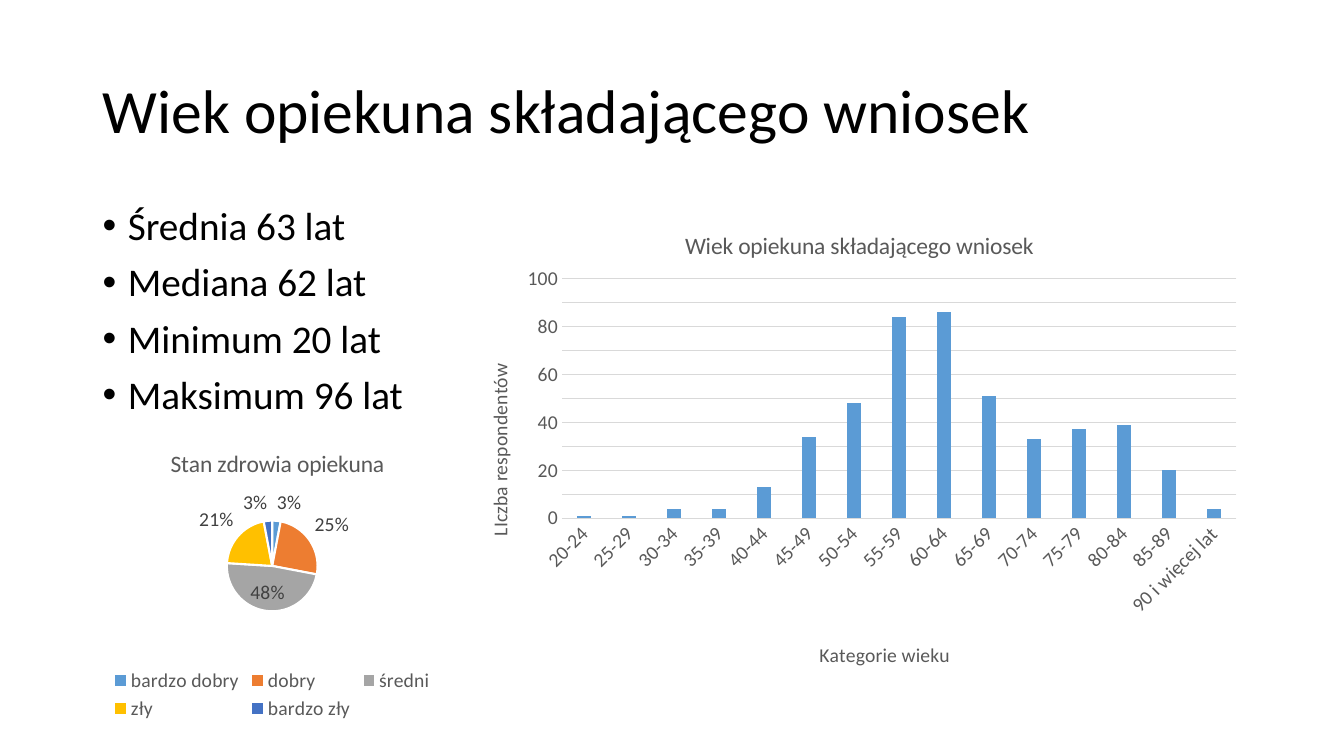
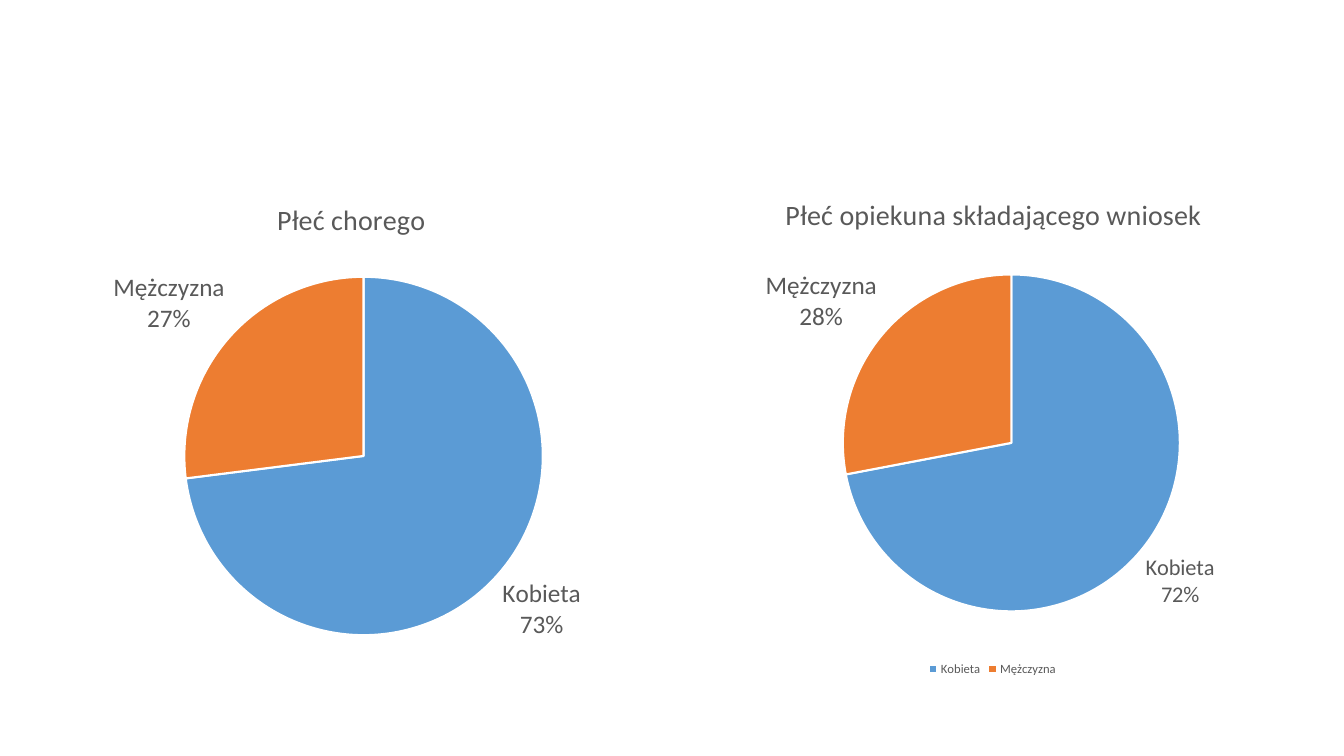
from copy import deepcopy

from lxml import etree
from pptx import Presentation
from pptx.chart.data import CategoryChartData
from pptx.dml.color import RGBColor
from pptx.enum.chart import XL_CHART_TYPE, XL_LABEL_POSITION, XL_LEGEND_POSITION, XL_TICK_MARK
from pptx.enum.text import MSO_ANCHOR
from pptx.oxml.ns import qn
from pptx.util import Inches, Pt

COLUMN = XL_CHART_TYPE.COLUMN_CLUSTERED
PIE = XL_CHART_TYPE.PIE
BEST = XL_LABEL_POSITION.BEST_FIT
OUT = XL_LABEL_POSITION.OUTSIDE_END
BOTTOM = XL_LEGEND_POSITION.BOTTOM
NO_TICK = XL_TICK_MARK.NONE
MIDDLE = MSO_ANCHOR.MIDDLE

FONT = "Calibri"
BLACK = RGBColor(0x00, 0x00, 0x00)
WHITE = RGBColor(0xFF, 0xFF, 0xFF)
GRAY = RGBColor(0x59, 0x59, 0x59)
DARK = RGBColor(0x40, 0x40, 0x40)
RULE = RGBColor(0xD9, 0xD9, 0xD9)
BLUE = RGBColor(0x5B, 0x9B, 0xD5)
SLICES = [
    BLUE,
    RGBColor(0xED, 0x7D, 0x31),
    RGBColor(0xA5, 0xA5, 0xA5),
    RGBColor(0xFF, 0xC0, 0x00),
    RGBColor(0x44, 0x72, 0xC4),
]

AGES = [f"{low}-{low + 4}" for low in range(20, 90, 5)] + ["90 i więcej lat"]
COUNTS = [1, 1, 4, 4, 13, 34, 48, 84, 86, 51, 33, 37, 39, 20, 4]
HEALTH = ["bardzo dobry", "dobry", "średni", "zły", "bardzo zły"]
SEXES = ["Kobieta", "Mężczyzna"]


def style(font, size, color=GRAY):
    font.name = FONT
    font.size = Pt(size)
    font.bold = False
    font.color.rgb = color


def add_text(slide, box, lines, size, bullet=False):
    frame = slide.shapes.add_textbox(*map(Inches, box)).text_frame
    frame.word_wrap = True
    frame.text = "\n".join(lines)
    for para in frame.paragraphs:
        para.line_spacing = 0.9
        style(para.runs[0].font, size, BLACK)
        if bullet:
            para.space_before = Pt(10)
            props = para._p.get_or_add_pPr()
            props.set("marL", str(Inches(0.25)))
            props.set("indent", str(Inches(-0.25)))
            etree.SubElement(props, qn("a:buFont")).set("typeface", "Arial")
            etree.SubElement(props, qn("a:buChar")).set("char", "•")
    return frame


def place(part, spots):
    layout = part.find(qn("c:layout"))
    if layout is None:
        layout = etree.Element(qn("c:layout"))
        part.insert(0, layout)
    manual = etree.SubElement(layout, qn("c:manualLayout"))
    rules = [("xMode", "edge"), ("yMode", "edge"), *zip("xywh", spots)]
    if len(spots) == 4:
        rules.insert(0, ("layoutTarget", "inner"))
    for tag, value in rules:
        etree.SubElement(manual, qn(f"c:{tag}")).set("val", str(value))


def set_title(title, text, size, spot):
    title.text_frame.text = text
    style(title.text_frame.paragraphs[0].runs[0].font, size)
    place(title._element, spot)


def add_chart(slide, kind, box, cats, vals, title, size, spot, plot):
    data = CategoryChartData()
    data.categories = cats
    data.add_series("Series 1", vals)
    chart = slide.shapes.add_chart(kind, *map(Inches, box), data).chart
    style(chart.font, 14, BLACK)
    chart.has_legend = False
    chart.has_title = True
    set_title(chart.chart_title, title, size, spot)
    place(chart._chartSpace.chart.plotArea, plot)
    return chart


def turn(part, angle):
    body = next(part.iter(qn("a:bodyPr")))
    body.set("rot", str(angle * 60000))
    body.set("vert", "horz")


def rule(line):
    line.color.rgb = RULE
    line.width = Pt(0.75)


def add_grid(axis):
    axis.has_major_gridlines = axis.has_minor_gridlines = True
    rule(axis.major_gridlines.format.line)
    major = axis._element.find(qn("c:majorGridlines"))
    minor = axis._element.find(qn("c:minorGridlines"))
    minor.append(deepcopy(major.find(qn("c:spPr"))))


def add_bars(slide, box, cats, vals, title, size, spot, plot):
    chart = add_chart(slide, COLUMN, box, cats, vals, title, size, spot, plot)
    bars = chart.plots[0]
    bars.gap_width = 219
    bars.overlap = -27
    bars.vary_by_categories = False
    fill = bars.series[0].format.fill
    fill.solid()
    fill.fore_color.rgb = BLUE
    cat, val = chart.category_axis, chart.value_axis
    for axis in (cat, val):
        axis.major_tick_mark = axis.minor_tick_mark = NO_TICK
        style(axis.tick_labels.font, 14)
    rule(cat.format.line)
    turn(cat._element.find(qn("c:txPr")), -45)
    val.format.line.fill.background()
    val.minimum_scale, val.maximum_scale = 0, 100
    val.major_unit, val.minor_unit = 20, 10
    add_grid(val)
    set_title(cat.axis_title, "Kategorie wieku", 14, (0.45, 0.91))
    set_title(val.axis_title, "LIczba respondentów", 14, (0.03, 0.33))
    turn(val.axis_title._element, -90)


def add_pie(slide, box, cats, vals, title, size, spot, plot,
            label, color=GRAY, pos=OUT, named=True, legend=None, last=None):
    chart = add_chart(slide, PIE, box, cats, vals, title, size, spot, plot)
    if legend:
        chart.has_legend = True
        chart.legend.position = BOTTOM
        chart.legend.include_in_layout = False
        style(chart.legend.font, legend)
    series = chart.plots[0].series[0]
    for i in range(len(vals)):
        form = series.points[i].format
        form.fill.solid()
        form.fill.fore_color.rgb = SLICES[i]
        form.line.color.rgb = WHITE
        form.line.width = Pt(1.5)
    labels = series.data_labels
    style(labels.font, label, color)
    labels.number_format = "0%"
    labels.number_format_is_linked = False
    labels.position = pos
    if last:
        note = series.points[len(vals) - 1].data_label
        style(note.font, last, color)
        note.position = pos
    flags = {"showVal": 0, "showCatName": int(named), "showPercent": 1}
    for part in series._element.iter(qn("c:dLbls"), qn("c:dLbl")):
        for tag, flag in flags.items():
            part.find(qn(f"c:{tag}")).set("val", str(flag))
        if named:
            mark = etree.Element(qn("c:separator"))
            mark.text = "\n"
            part.find(qn("c:showBubbleSize")).addnext(mark)


def add_age(slide):
    title = "Wiek opiekuna składającego wniosek"
    head = add_text(slide, (0.92, 0.4, 11.5, 1.45), [title], 44)
    head.vertical_anchor = MIDDLE
    facts = ["Średnia 63 lat", "Mediana 62 lat", "Minimum 20 lat", "Maksimum 96 lat"]
    add_text(slide, (0.92, 2, 4.07, 4.76), facts, 28, bullet=True)
    add_bars(slide, (4.55, 2, 7.87, 4.76), AGES, COUNTS, title, 16.8,
             (0.28, 0.05), (0.13, 0.16, 0.85, 0.5))
    add_pie(slide, (0.2, 4.19, 5, 3), HEALTH, [3, 25, 48, 21, 3],
            "Stan zdrowia opiekuna", 16.8, (0.29, 0.07), (0.41, 0.32, 0.18, 0.31),
            14, DARK, BEST, named=False, legend=14)


def add_sex(slide):
    add_pie(slide, (6.75, 1.63, 6.19, 5.12), SEXES, [72, 28],
            "Płeć opiekuna składającego wniosek", 20, (0.16, 0.05),
            (0.26, 0.21, 0.54, 0.66), 16, legend=9, last=18)
    add_pie(slide, (0.32, 1.68, 6.26, 5.08), SEXES, [73, 27],
            "Płeć chorego", 20, (0.38, 0.05), (0.24, 0.21, 0.57, 0.7), 18)


def main():
    deck = Presentation()
    deck.slide_width, deck.slide_height = Inches(13.33), Inches(7.5)
    for build in (add_age, add_sex):
        build(deck.slides.add_slide(deck.slide_layouts[6]))
    deck.save("out.pptx")


if __name__ == "__main__":
    main()
